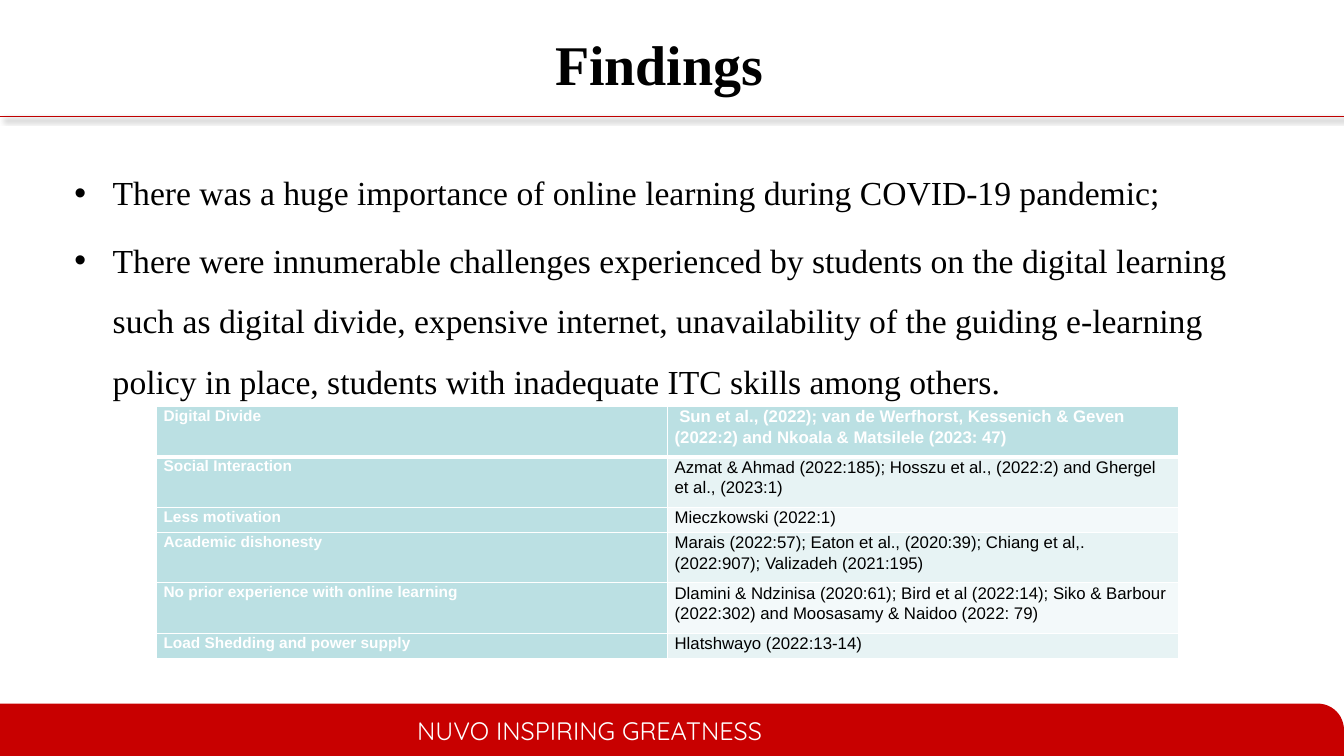
from lxml.etree import SubElement
from pptx import Presentation
from pptx.dml.color import RGBColor
from pptx.enum.shapes import MSO_CONNECTOR as Connector, MSO_SHAPE as Shape
from pptx.enum.text import MSO_ANCHOR as Anchor, PP_ALIGN as Align
from pptx.oxml.ns import qn
from pptx.util import Inches, Pt

BLACK = RGBColor(0x00, 0x00, 0x00)
WHITE = RGBColor(0xFF, 0xFF, 0xFF)
RULE_RED = RGBColor(0xC0, 0x00, 0x00)
BAND_RED = RGBColor(0xC8, 0x00, 0x00)
TEAL = RGBColor(0xBB, 0xE0, 0xE3)
TEAL_LIGHT = RGBColor(0xE7, 0xF3, 0xF4)
TEAL_PALE = RGBColor(0xF3, 0xF9, 0xFA)

TITLE = {"name": "Times New Roman", "size": Pt(40), "bold": True, "color": BLACK}
BODY = {"name": "Times New Roman", "size": Pt(24), "bold": False, "color": BLACK}
FOOTER = {"name": "Quicksand", "size": Pt(18), "bold": False, "color": WHITE}
TOPIC = {"name": "Arial", "size": Pt(11), "bold": True, "color": WHITE}
SOURCE = {"name": "Arial", "size": Pt(12), "bold": False, "color": BLACK}
SOURCE_HEAD = {**SOURCE, "bold": True, "color": WHITE}

BULLETS = [
    "There was a huge importance of online learning during COVID-19 pandemic;",
    "There were innumerable challenges experienced by students on the digital learning "
    "such as digital divide, expensive internet, unavailability of the guiding e-learning "
    "policy in place, students with inadequate ITC skills among others.",
]

# Topic, sources, number of text lines
FINDINGS = [
    ("Digital Divide", " Sun et al., (2022); van de Werfhorst, Kessenich & Geven "
     "(2022:2) and Nkoala & Matsilele (2023: 47)", 2),
    ("Social Interaction", "Azmat & Ahmad (2022:185); Hosszu et al., (2022:2) and "
     "Ghergel et al., (2023:1)", 2),
    ("Less motivation", "Mieczkowski (2022:1)", 1),
    ("Academic dishonesty", "Marais (2022:57); Eaton et al., (2020:39); Chiang et al,. "
     "(2022:907); Valizadeh (2021:195)", 2),
    ("No prior experience with online learning", "Dlamini & Ndzinisa (2020:61); "
     "Bird et al (2022:14); Siko & Barbour (2022:302) and Moosasamy & Naidoo (2022: 79)", 2),
    ("Load Shedding and power supply", "Hlatshwayo (2022:13-14)", 1),
]


class FindingsSlide:
    """Places elements on a grid of 100 columns by 100 rows."""

    def __init__(self, presentation):
        self.column = presentation.slide_width / 100
        self.row = presentation.slide_height / 100
        self.slide = presentation.slides.add_slide(presentation.slide_layouts[5])
        self.shapes = self.slide.shapes

    def box(self, left, top, width, height):
        return (round(left * self.column), round(top * self.row),
                round(width * self.column), round(height * self.row))

    def styled_run(self, paragraph, text, style):
        run = paragraph.add_run()
        run.text = text
        for key, value in style.items():
            if key == "color":
                run.font.color.rgb = value
            else:
                setattr(run.font, key, value)

    def title(self, text, *place):
        shape = self.shapes.title
        shape.left, shape.top, shape.width, shape.height = self.box(*place)
        shape.text_frame.vertical_anchor = Anchor.MIDDLE
        paragraph = shape.text_frame.paragraphs[0]
        paragraph.alignment = Align.CENTER
        self.styled_run(paragraph, text, TITLE)

    def rule(self, top):
        left, height, width, _ = self.box(0, top, 100, 0)
        line = self.shapes.add_connector(Connector.STRAIGHT, left, height, width, height)
        line.line.color.rgb = RULE_RED
        line.line.width = Pt(0.75)
        effects = SubElement(line._element.spPr, qn("a:effectLst"))
        shadow = SubElement(effects, qn("a:outerShdw"), blurRad=str(Pt(4)),
                            dist=str(Pt(3)), dir=str(45 * 60000), algn="tl", rotWithShape="0")
        color = SubElement(shadow, qn("a:srgbClr"), val=str(BLACK))
        SubElement(color, qn("a:alpha"), val="40000")

    def band(self, *place):
        shape = self.shapes.add_shape(Shape.ROUND_1_RECTANGLE, *self.box(*place))
        shape.adjustments[0] = 0.5
        shape.shadow.inherit = False
        shape.fill.solid()
        shape.fill.fore_color.rgb = BAND_RED
        shape.line.fill.background()

    def text(self, text, style, *place):
        frame = self.shapes.add_textbox(*self.box(*place)).text_frame
        frame.word_wrap = True
        self.styled_run(frame.paragraphs[0], text, style)

    def bullets(self, items, *place):
        frame = self.shapes.add_textbox(*self.box(*place)).text_frame
        frame.word_wrap = True
        for index, item in enumerate(items):
            paragraph = frame.add_paragraph() if index else frame.paragraphs[0]
            paragraph.line_spacing = 1.5
            paragraph.space_before = Pt(4.8)
            self.styled_run(paragraph, item, BODY)
            properties = paragraph._p.get_or_add_pPr()
            properties.set("marL", str(Inches(0.38)))
            properties.set("indent", str(-Inches(0.38)))
            SubElement(properties, qn("a:buFont"), typeface="Arial")
            SubElement(properties, qn("a:buChar"), char="•")

    def borders(self, cell, widths):
        properties = cell._tc.get_or_add_tcPr()
        for side, width in zip("LRTB", widths):
            line = SubElement(properties, qn(f"a:ln{side}"), w=str(Pt(width)))
            fill = SubElement(line, qn("a:solidFill"))
            SubElement(fill, qn("a:srgbClr"), val=str(WHITE))

    def cell(self, cell, text, style, fill, widths):
        margins = {"margin_left": Inches(0.07), "margin_right": Inches(0.07),
                   "margin_top": 0, "margin_bottom": 0}
        for key, value in margins.items():
            setattr(cell, key, value)
        self.borders(cell, widths)
        cell.fill.solid()
        cell.fill.fore_color.rgb = fill
        paragraph = cell.text_frame.paragraphs[0]
        paragraph.line_spacing = 1.07
        self.styled_run(paragraph, text, style)

    def table(self, findings, *place):
        table = self.shapes.add_table(len(findings), 2, *self.box(*place)).table
        line_height = self.box(*place)[3] / sum(lines for _, _, lines in findings)
        for index, (topic, sources, lines) in enumerate(findings):
            table.rows[index].height = round(line_height * lines)
            header = index == 0
            widths = (1, 1, 3 if index == 1 else 1, 3 if header else 1)
            shade = TEAL if header else (TEAL_LIGHT if index % 2 else TEAL_PALE)
            self.cell(table.cell(index, 0), topic, TOPIC, TEAL, widths)
            self.cell(table.cell(index, 1), sources,
                      SOURCE_HEAD if header else SOURCE, shade, widths)


def main():
    presentation = Presentation()
    presentation.slide_width, presentation.slide_height = Inches(13.33), Inches(7.5)
    page = FindingsSlide(presentation)

    # Header rule and footer band
    page.rule(15.4)
    page.band(0, 93.07, 100, 6.93)
    page.text("NUVO INSPIRING GREATNESS", FOOTER, 30.3, 94, 35.4, 5.33)

    # Title, main points and table of sources
    page.title("Findings", 4.05, 0, 90, 16.67)
    page.bullets(BULLETS, 4.8, 19.47, 90, 67.6)
    page.table(FINDINGS, 11.65, 53.75, 76.05, 33.35)

    presentation.save("out.pptx")


if __name__ == "__main__":
    main()
